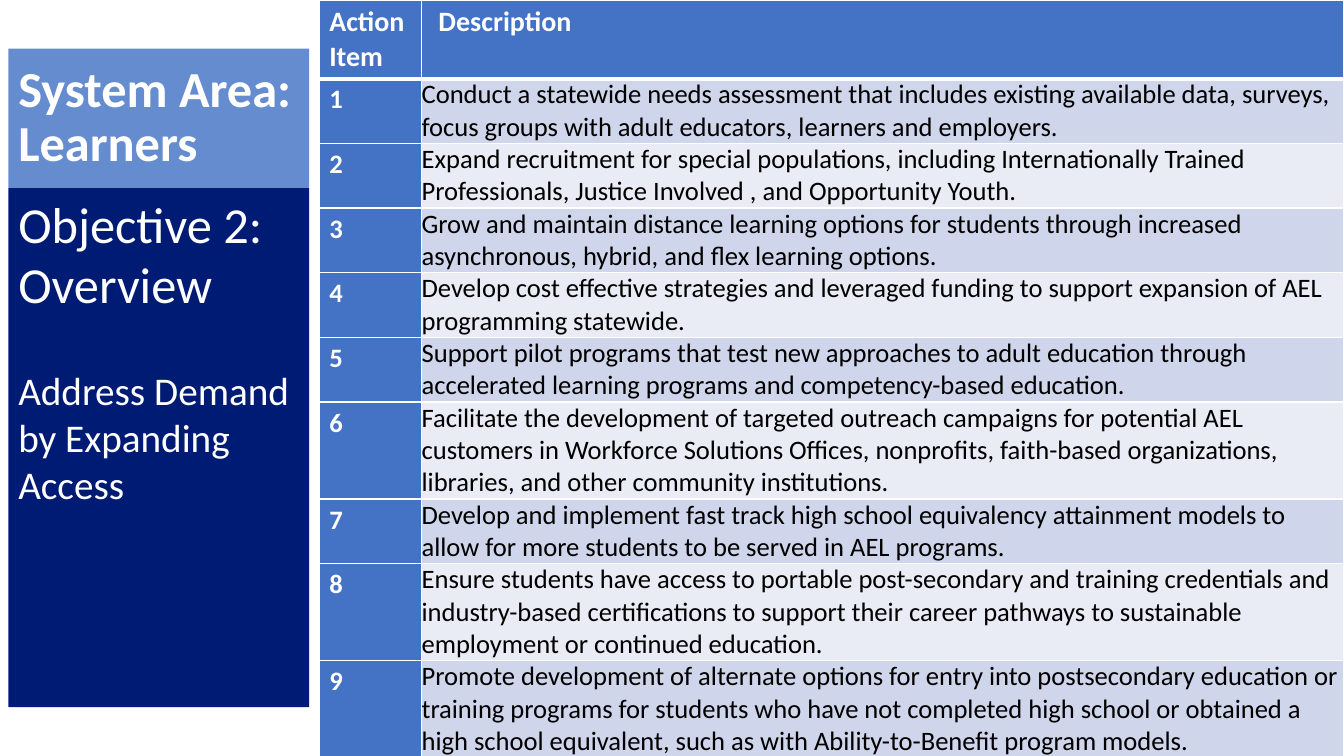
from dataclasses import dataclass

from lxml import etree
from pptx import Presentation
from pptx.dml.color import RGBColor
from pptx.enum.shapes import MSO_SHAPE
from pptx.enum.text import MSO_ANCHOR, PP_ALIGN
from pptx.oxml.ns import qn
from pptx.util import Inches, Pt

RECT = MSO_SHAPE.RECTANGLE
LEFT = PP_ALIGN.LEFT
TOP, MIDDLE = MSO_ANCHOR.TOP, MSO_ANCHOR.MIDDLE

GRID_COLS, GRID_ROWS = 160, 90
PANEL_COL, PANEL_COLS = 1, 35.8
TABLE_COL, NUMBER_COLS = 38, 12.2
HEADER_ROWS, LINE_ROWS = 9.1, 3.85


@dataclass(frozen=True)
class Theme:
    font: str = "Calibri"
    white: str = "FFFFFF"
    black: str = "000000"
    title_fill: str = "668CD0"
    panel_fill: str = "001B74"
    header_fill: str = "4472C4"
    bands: tuple = ("CFD5EA", "E9EBF5")
    heading: int = 36
    subheading: int = 28
    table_head: int = 20
    table_body: int = 19
    panel_gap: int = 37
    border: int = 1
    header_border: int = 3


# Number of text lines in the row, description
ACTIONS = [
    (2, "Conduct a statewide needs assessment that includes existing available data, "
        "surveys, focus groups with adult educators, learners and employers."),
    (2, "Expand recruitment for special populations, including Internationally Trained "
        "Professionals, Justice Involved , and Opportunity Youth."),
    (2, "Grow and maintain distance learning options for students through increased "
        "asynchronous, hybrid, and flex learning options."),
    (2, "Develop cost effective strategies and leveraged funding to support expansion "
        "of AEL programming statewide."),
    (2, "Support pilot programs that test new approaches to adult education through "
        "accelerated learning programs and competency-based education."),
    (3, "Facilitate the development of targeted outreach campaigns for potential AEL "
        "customers in Workforce Solutions Offices, nonprofits, faith-based "
        "organizations, libraries, and other community institutions."),
    (2, "Develop and implement fast track high school equivalency attainment models to "
        "allow for more students to be served in AEL programs."),
    (3, "Ensure students have access to portable post-secondary and training "
        "credentials and industry-based certifications to support their career "
        "pathways to sustainable employment or continued education."),
    (3, "Promote development of alternate options for entry into postsecondary "
        "education or training programs for students who have not completed high "
        "school or obtained a high school equivalent, such as with "
        "Ability-to-Benefit program models."),
]


class Deck:
    def __init__(self, theme):
        self.theme = theme
        self.prs = Presentation()
        self.prs.slide_width, self.prs.slide_height = Inches(13.33), Inches(7.5)
        self.s = self.prs.slides.add_slide(self.prs.slide_layouts[6])

    def x(self, cols):
        return round(self.prs.slide_width * cols / GRID_COLS)

    def y(self, rows):
        return round(self.prs.slide_height * rows / GRID_ROWS)

    def style(self, p, size, color, bold=False):
        p.alignment = LEFT
        for r in p.runs:
            r.font.name = self.theme.font
            r.font.size = Pt(size)
            r.font.bold = bold
            r.font.color.rgb = RGBColor.from_string(color)

    def panel(self, row, rows, fill, lines, anchor=TOP, bold=False):
        """Add a filled side block; lines holds (text, size) pairs."""
        sp = self.s.shapes.add_shape(RECT, self.x(PANEL_COL), self.y(row),
                                     self.x(PANEL_COLS), self.y(rows))
        sp.shadow.inherit = False
        sp.fill.solid()
        sp.fill.fore_color.rgb = RGBColor.from_string(fill)
        sp.line.fill.background()
        tf = sp.text_frame
        tf.word_wrap = True
        tf.vertical_anchor = anchor
        tf.text = "\n".join(text for text, _ in lines)
        for p, (_, size) in zip(tf.paragraphs, lines):
            self.style(p, size, self.theme.white, bold)
        return tf

    def cell(self, cell, text, fill, size, color, bold, bottom):
        cell.text = text
        cell.vertical_anchor = TOP
        self.style(cell.text_frame.paragraphs[0], size, color, bold)
        cell.fill.solid()
        cell.fill.fore_color.rgb = RGBColor.from_string(fill)
        self.borders(cell, bottom)

    def borders(self, cell, bottom):
        tc_pr = cell._tc.get_or_add_tcPr()
        for i, side in enumerate("LRTB"):
            width = bottom if side == "B" else self.theme.border
            ln = etree.Element(qn(f"a:ln{side}"), w=str(Pt(width)))
            fill = etree.SubElement(ln, qn("a:solidFill"))
            etree.SubElement(fill, qn("a:srgbClr"), val=self.theme.white)
            tc_pr.insert(i, ln)

    def action_table(self, actions):
        t = self.theme
        heights = [HEADER_ROWS] + [lines * LINE_ROWS for lines, _ in actions]
        widths = [NUMBER_COLS, GRID_COLS - TABLE_COL - NUMBER_COLS]
        table = self.s.shapes.add_table(
            len(heights), len(widths), self.x(TABLE_COL), 0,
            self.x(sum(widths)), self.y(sum(heights))).table
        table.first_row = table.horz_banding = False
        for column, width in zip(table.columns, widths):
            column.width = self.x(width)
        for row, height in zip(table.rows, heights):
            row.height = self.y(height)

        for col, text in enumerate(("Action Item", "Description")):
            self.cell(table.cell(0, col), text, t.header_fill, t.table_head,
                      t.white, True, t.header_border)
        table.cell(0, 1).margin_left = self.x(2)

        for i, (_, text) in enumerate(actions):
            number, description = table.cell(i + 1, 0), table.cell(i + 1, 1)
            self.cell(number, str(i + 1), t.header_fill, t.table_body,
                      t.white, True, t.border)
            self.cell(description, text, t.bands[i % 2], t.table_body,
                      t.black, False, t.border)
            description.margin_left = description.margin_right = 0
            description.margin_top = description.margin_bottom = 0


def main():
    theme = Theme()
    deck = Deck(theme)
    title = deck.panel(5.8, 16.6, theme.title_fill,
                       [("System Area: Learners", theme.heading)], MIDDLE, True)
    title.paragraphs[0].line_spacing = 0.9
    objective = deck.panel(22.4, 61.8, theme.panel_fill,
                           [("Objective 2: Overview", theme.heading),
                            ("Address Demand by Expanding Access", theme.subheading)])
    objective.paragraphs[1].space_before = Pt(theme.panel_gap)
    deck.action_table(ACTIONS)
    deck.prs.save("out.pptx")


if __name__ == "__main__":
    main()
